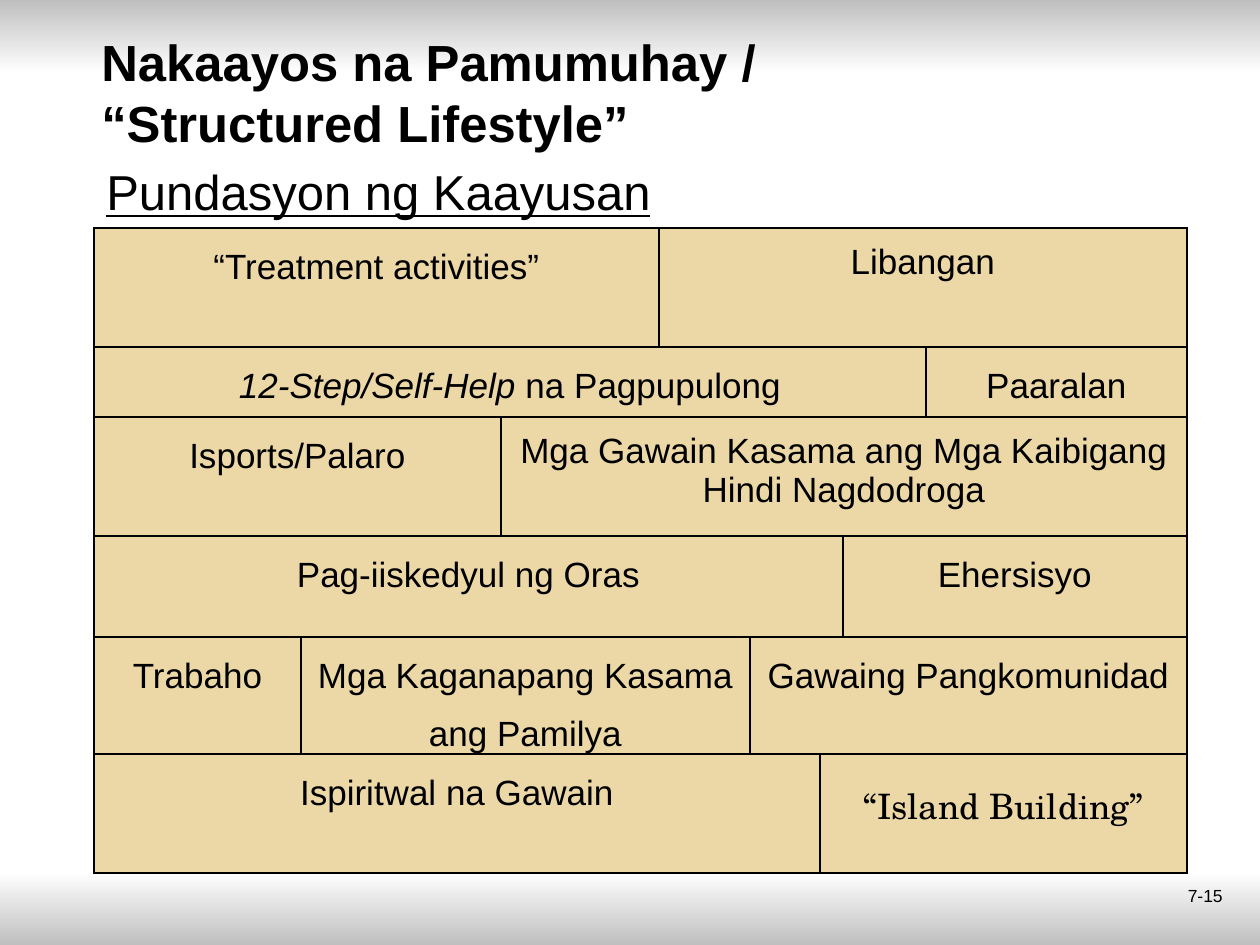
from dataclasses import dataclass

from lxml import etree
from pptx import Presentation
from pptx import util as u
from pptx.dml.color import RGBColor
from pptx.enum import shapes, text
from pptx.oxml.ns import qn

EMU_PER_PX = 914400 / 126
SLIDE_W, SLIDE_H = 1260, 945


@dataclass(frozen=True)
class Theme:
    font: str = "Arial"
    serif: str = "TeX Gyre Schola"
    ink: str = "000000"
    paper: str = "FFFFFF"
    shade: str = "BFBFBF"
    brick: str = "ECD8A6"
    heading_size: int = 29
    subtitle_size: int = 28
    brick_size: int = 20
    number_size: int = 10
    border_width: float = 1


THEME = Theme()


@dataclass(frozen=True)
class Band:
    top: int
    height: int
    start: str
    end: str


@dataclass(frozen=True)
class Label:
    wording: str
    box: tuple[int, int, int, int]
    font: dict
    align: text.PP_ALIGN = text.PP_ALIGN.LEFT
    anchor: text.MSO_ANCHOR = text.MSO_ANCHOR.MIDDLE


@dataclass(frozen=True)
class Brick:
    wording: str
    right: int
    italic_lead: str = ""
    spacing: float = 1.5
    top_inset: int = 0
    font: str = THEME.font


@dataclass(frozen=True)
class Course:
    height: int
    bricks: tuple[Brick, ...]


BANDS = (
    Band(872, 73, THEME.paper, THEME.shade),
    Band(0, 73, THEME.shade, THEME.paper),
)

LABELS = (
    Label("Pundasyon ng Kaayusan", (94, 136, 1061, 110),
          {"size": u.Pt(THEME.subtitle_size), "underline": True}),
    Label("Nakaayos na Pamumuhay /\v“Structured Lifestyle”", (89, 37, 1061, 110),
          {"size": u.Pt(THEME.heading_size), "bold": True}),
    Label("7-15", (941, 879, 294, 66), {"size": u.Pt(THEME.number_size)},
          text.PP_ALIGN.RIGHT, text.MSO_ANCHOR.TOP),
)

WALL_LEFT, WALL_TOP, WALL_RIGHT = 94, 228, 1187
SIDE_INSET = 9

COURSES = (
    Course(119, (
        Brick("“Treatment activities”", 659),
        Brick("Libangan", WALL_RIGHT, spacing=1, top_inset=15),
    )),
    Course(70, (
        Brick("na Pagpupulong", 926, italic_lead="12-Step/Self-Help "),
        Brick("Paaralan", WALL_RIGHT),
    )),
    Course(119, (
        Brick("Isports/Palaro", 501),
        Brick("Mga Gawain Kasama ang Mga Kaibigang Hindi Nagdodroga", WALL_RIGHT,
              spacing=1, top_inset=15),
    )),
    Course(101, (
        Brick("Pag-iiskedyul ng Oras", 843),
        Brick("Ehersisyo", WALL_RIGHT),
    )),
    Course(117, (
        Brick("Trabaho", 301),
        Brick("Mga Kaganapang Kasama ang Pamilya", 750),
        Brick("Gawaing Pangkomunidad", WALL_RIGHT),
    )),
    Course(119, (
        Brick("Ispiritwal na Gawain", 820),
        Brick("“Island Building”", WALL_RIGHT, font=THEME.serif),
    )),
)


def px(length: int) -> u.Emu:
    return u.Emu(round(length * EMU_PER_PX))


def apply(target, values: dict) -> None:
    for name, value in values.items():
        setattr(target, name, value)


def format_font(font, values: dict) -> None:
    apply(font, {"name": THEME.font, **values})
    font.color.rgb = RGBColor.from_string(THEME.ink)


def draw_band(slide, band: Band) -> None:
    strip = slide.shapes.add_shape(
        shapes.MSO_SHAPE.RECTANGLE, 0, px(band.top), px(SLIDE_W), px(band.height))
    strip.shadow.inherit = False
    strip.line.fill.background()
    strip.fill.gradient()
    strip.fill.gradient_angle = 270
    for stop, color, position in zip(
            strip.fill.gradient_stops, (band.start, band.end), (0, 1)):
        stop.color.rgb = RGBColor.from_string(color)
        stop.position = position


def draw_label(slide, label: Label) -> None:
    frame = slide.shapes.add_textbox(*map(px, label.box)).text_frame
    apply(frame, {"word_wrap": True, "vertical_anchor": label.anchor})
    line = frame.paragraphs[0]
    line.text = label.wording
    line.alignment = label.align
    for run in line.runs:
        format_font(run.font, label.font)


def outline_cell(cell) -> None:
    properties = cell._tc.get_or_add_tcPr()
    for index, side in enumerate(("a:lnL", "a:lnR", "a:lnT", "a:lnB")):
        border = etree.Element(qn(side), w=str(u.Pt(THEME.border_width)))
        fill = etree.SubElement(border, qn("a:solidFill"))
        etree.SubElement(fill, qn("a:srgbClr"), val=THEME.ink)
        properties.insert(index, border)


def write_brick(cell, brick: Brick) -> None:
    apply(cell, {"margin_left": px(SIDE_INSET), "margin_right": px(SIDE_INSET),
                 "margin_top": px(brick.top_inset), "margin_bottom": 0})
    line = cell.text_frame.paragraphs[0]
    apply(line, {"alignment": text.PP_ALIGN.CENTER, "line_spacing": brick.spacing})
    for wording, italic in ((brick.italic_lead, True), (brick.wording, False)):
        if wording:
            run = line.add_run()
            run.text = wording
            format_font(run.font, {"name": brick.font, "italic": italic,
                                   "size": u.Pt(THEME.brick_size)})


def draw_wall(slide, courses: tuple[Course, ...]) -> None:
    edges = sorted({WALL_LEFT} | {b.right for c in courses for b in c.bricks})
    height = sum(course.height for course in courses)
    wall = slide.shapes.add_table(
        len(courses), len(edges) - 1, px(WALL_LEFT), px(WALL_TOP),
        px(WALL_RIGHT - WALL_LEFT), px(height)).table
    apply(wall, {"first_row": False, "horz_banding": False})
    for column, left, right in zip(wall.columns, edges, edges[1:]):
        column.width = px(right - left)
    for cell in wall.iter_cells():
        cell.fill.solid()
        cell.fill.fore_color.rgb = RGBColor.from_string(THEME.brick)
        outline_cell(cell)
    for row, course in enumerate(courses):
        wall.rows[row].height = px(course.height)
        first = 0
        for brick in course.bricks:
            end = edges.index(brick.right)
            cell = wall.cell(row, first)
            if end - first > 1:
                cell.merge(wall.cell(row, end - 1))
            write_brick(cell, brick)
            first = end


def main() -> None:
    deck = Presentation()
    apply(deck, {"slide_width": px(SLIDE_W), "slide_height": px(SLIDE_H)})
    slide = deck.slides.add_slide(deck.slide_layouts[6])
    for band in BANDS:
        draw_band(slide, band)
    draw_wall(slide, COURSES)
    for label in LABELS:
        draw_label(slide, label)
    deck.save("out.pptx")


if __name__ == "__main__":
    main()
